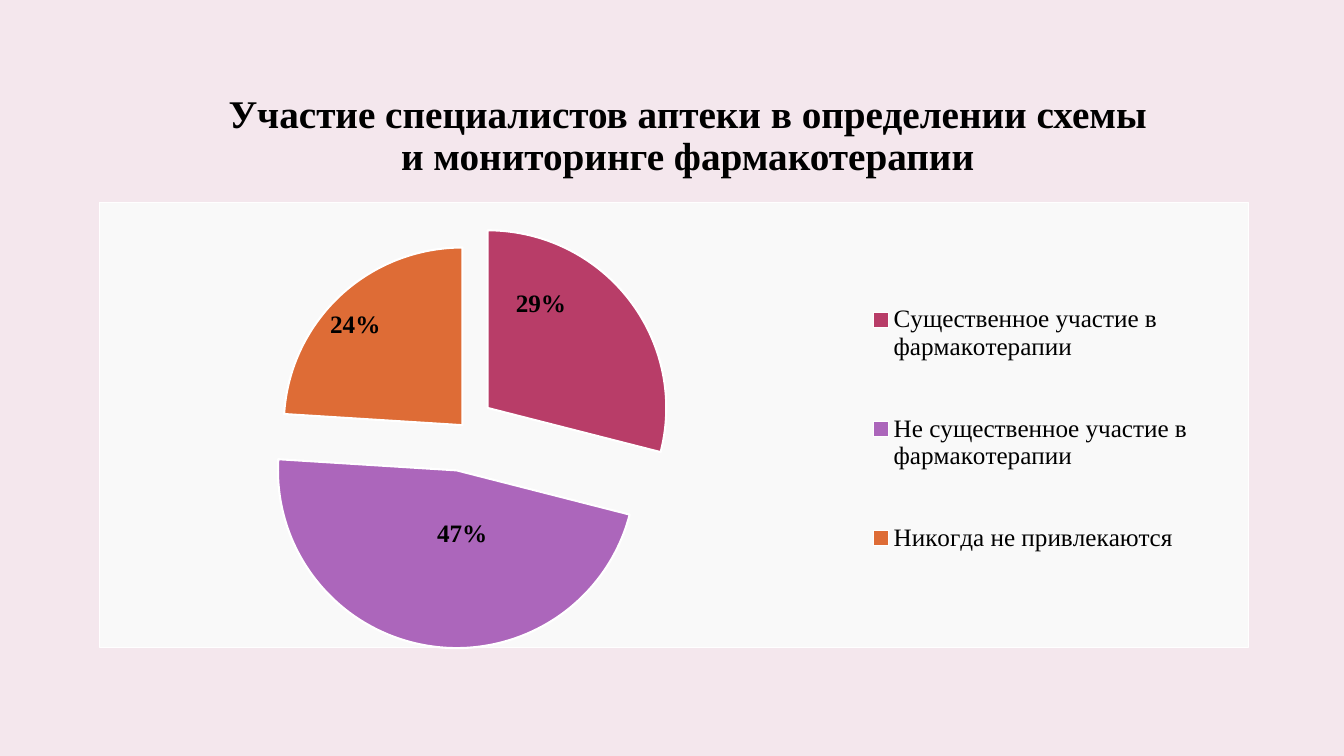
from dataclasses import dataclass

from lxml.etree import _Element
from pptx import Presentation
from pptx.chart.chart import Chart
from pptx.chart.data import CategoryChartData
from pptx.dml.color import RGBColor
from pptx.enum.chart import XL_CHART_TYPE, XL_LABEL_POSITION, XL_LEGEND_POSITION
from pptx.enum.text import MSO_AUTO_SIZE, PP_ALIGN
from pptx.oxml import parse_xml
from pptx.oxml.ns import nsdecls, qn
from pptx.slide import Slide
from pptx.text.text import Font
from pptx.util import Inches, Pt

FONT = "Times New Roman"
COLORS = {
    "background": "F4E7ED",
    "panel": "F9F9F9",
    "white": "FFFFFF",
    "text": "000000",
    "raspberry": "B83D68",
    "violet": "AC66BB",
    "orange": "DE6C36",
}


@dataclass
class Answer:
    label: str
    percent: int
    color: str
    explosion: int
    label_shift: tuple[float, float]


ANSWERS = [
    Answer("Существенное участие в фармакотерапии", 29, "raspberry", 17, (-0.015, -0.11)),
    Answer("Не существенное участие в фармакотерапии", 47, "violet", 25, (0.017, -0.055)),
    Answer("Никогда не привлекаются", 24, "orange", 1, (-0.04, -0.08)),
]


def rgb(name: str) -> RGBColor:
    return RGBColor.from_string(COLORS[name])


def set_font(font: Font, size: float, bold: bool = False, color: str = "text") -> None:
    font.name = FONT
    font.size = Pt(size)
    font.bold = bold
    font.color.rgb = rgb(color)


def add_text(slide: Slide, text: str, *, left: float, top: float, width: float,
             height: float, size: float, bold: bool, line: float, after: float) -> None:
    box = slide.shapes.add_textbox(Inches(left), Inches(top), Inches(width), Inches(height))
    frame = box.text_frame
    frame.word_wrap = True
    frame.auto_size = MSO_AUTO_SIZE.SHAPE_TO_FIT_TEXT
    paragraph = frame.paragraphs[0]
    paragraph.alignment = PP_ALIGN.CENTER
    paragraph.line_spacing = Pt(line)
    paragraph.space_after = Pt(after)
    run = paragraph.add_run()
    run.text = text
    set_font(run.font, size, bold)


def manual_layout(target: str = "", **place: float) -> _Element:
    """Build a c:layout; x and y are offsets unless a target area is given."""
    parts = f'<c:layoutTarget val="{target}"/>' if target else ""
    if "w" in place:
        parts += '<c:xMode val="edge"/><c:yMode val="edge"/>'
    parts += "".join(f'<c:{key} val="{value}"/>' for key, value in place.items())
    return parse_xml(f'<c:layout {nsdecls("c")}><c:manualLayout>{parts}'
                     "</c:manualLayout></c:layout>")


def set_layout(parent: _Element, after: str | None, layout: _Element) -> None:
    for previous in parent.findall(qn("c:layout")):
        parent.remove(previous)
    if after is None:
        parent.insert(0, layout)
    else:
        parent.find(qn(after)).addnext(layout)


def style_panel(chart: Chart) -> None:
    space = chart._chartSpace
    properties = parse_xml(
        f'<c:spPr {nsdecls("c", "a")}>'
        f'<a:solidFill><a:srgbClr val="{COLORS["panel"]}"/></a:solidFill>'
        f'<a:ln w="{Pt(0.75)}"><a:solidFill><a:srgbClr val="{COLORS["white"]}"/>'
        "</a:solidFill></a:ln></c:spPr>")
    space.find(qn("c:chart")).addnext(properties)


def style_slices(chart: Chart) -> None:
    series = chart.plots[0].series[0]
    labels = series.data_labels
    labels.show_percentage = True
    labels.show_value = False
    set_font(labels.font, 18, bold=True)
    for index, answer in enumerate(ANSWERS):
        point = series.points[index]
        point.format.fill.solid()
        point.format.fill.fore_color.rgb = rgb(answer.color)
        point.format.line.color.rgb = rgb("white")
        point.format.line.width = Pt(1.5)
        slice_xml = series._element.findall(qn("c:dPt"))[index]
        slice_xml.find(qn("c:spPr")).addprevious(
            parse_xml(f'<c:explosion {nsdecls("c")} val="{answer.explosion}"/>'))

        label = point.data_label
        set_font(label.font, 18, bold=True)
        label.position = XL_LABEL_POSITION.CENTER
        label_xml = series._element.find(qn("c:dLbls")).findall(qn("c:dLbl"))[index]
        label_xml.find(qn("c:showVal")).set("val", "0")
        label_xml.find(qn("c:showPercent")).set("val", "1")
        x, y = answer.label_shift
        set_layout(label_xml, "c:idx", manual_layout(x=x, y=y))


def add_pie(slide: Slide) -> None:
    data = CategoryChartData()
    data.categories = [answer.label for answer in ANSWERS]
    data.add_series("Series 1", [answer.percent for answer in ANSWERS])
    chart = slide.shapes.add_chart(
        XL_CHART_TYPE.PIE, Inches(0.98), Inches(2), Inches(11.41), Inches(4.44), data).chart
    chart.has_title = False
    set_font(chart.font, 10)
    chart.plots[0].vary_by_categories = True
    style_panel(chart)
    style_slices(chart)

    chart.has_legend = True
    legend = chart.legend
    legend.position = XL_LEGEND_POSITION.RIGHT
    legend.include_in_layout = False
    set_font(legend.font, 18)
    set_layout(legend._element, "c:legendPos", manual_layout(x=0.65, y=0.11, w=0.32, h=0.8))
    plot_area = chart._chartSpace.find(qn("c:chart")).find(qn("c:plotArea"))
    set_layout(plot_area, None, manual_layout("inner", x=0.028, y=0.105, w=0.578, h=0.799))


def main() -> None:
    deck = Presentation()
    deck.slide_width, deck.slide_height = Inches(13.33), Inches(7.5)
    slide = deck.slides.add_slide(deck.slide_layouts[6])
    slide.background.fill.solid()
    slide.background.fill.fore_color.rgb = rgb("background")
    add_pie(slide)
    add_text(slide, "Участие специалистов аптеки в определении схемы и мониторинге фармакотерапии",
             left=2.05, top=0.89, width=9.54, height=0.94, size=28, bold=True, line=30, after=6)
    deck.save("out.pptx")


if __name__ == "__main__":
    main()
